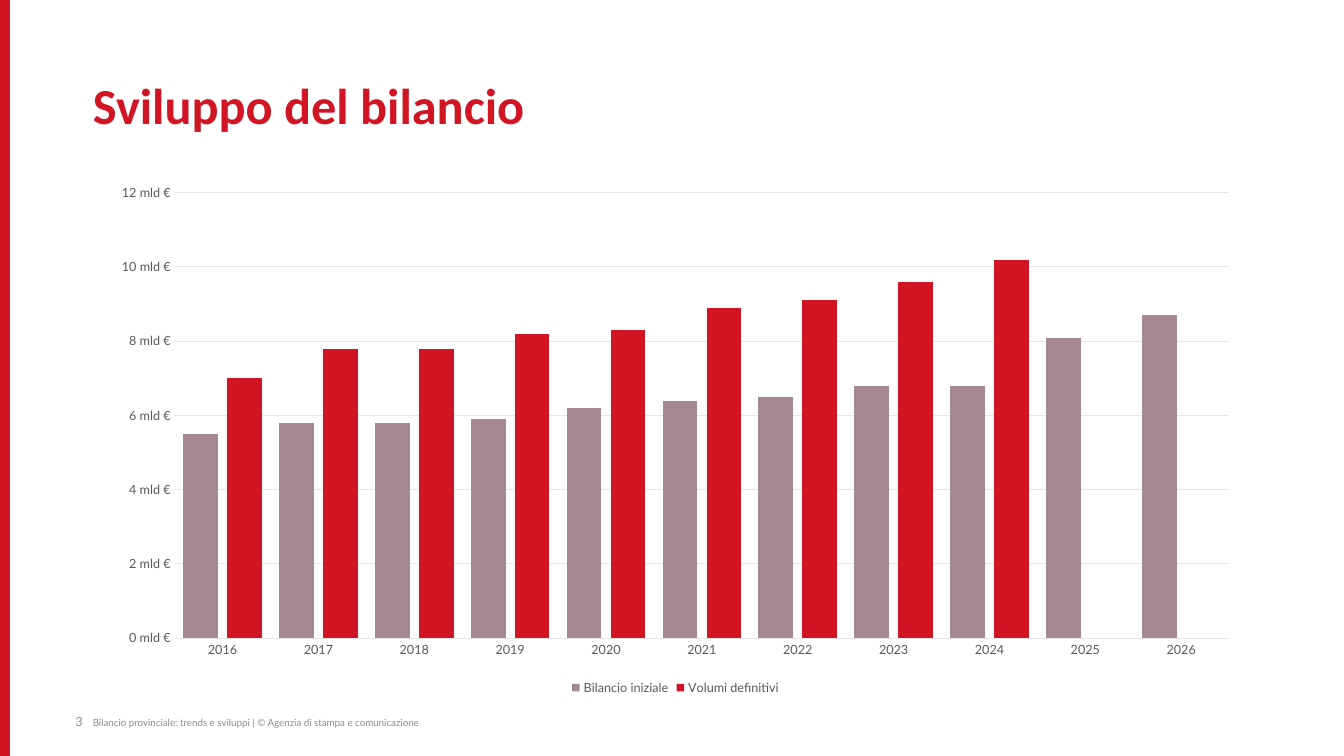
"""Build the budget development slide with its clustered column chart."""
from dataclasses import dataclass

from lxml.etree import SubElement
from pptx import Presentation
from pptx.chart.data import CategoryChartData
from pptx.dml.color import RGBColor
from pptx.enum.chart import XL_CHART_TYPE, XL_LEGEND_POSITION, XL_TICK_MARK
from pptx.enum.shapes import MSO_CONNECTOR
from pptx.enum.text import MSO_ANCHOR, MSO_AUTO_SIZE, PP_ALIGN
from pptx.oxml.ns import qn
from pptx.util import Inches, Pt

RED = RGBColor(0xD1, 0x15, 0x24)
MAUVE = RGBColor(0xA5, 0x89, 0x92)
FOOTER_GREY = RGBColor(0x8C, 0x8C, 0x8C)
LABEL_GREY = RGBColor(0x59, 0x59, 0x59)
GRID_GREY = RGBColor(0xE6, 0xE6, 0xE6)
BILLION = 1_000_000_000
YEARS = [str(year) for year in range(2016, 2027)]


@dataclass
class Label:
    text: str
    left: float
    top: float
    width: float
    height: float
    size: float
    align: PP_ALIGN


@dataclass
class BudgetSeries:
    name: str
    billions: list[float | None]
    color: RGBColor


FOOTERS = [
    Label("Bilancio provinciale: trends e sviluppi | © Agenzia di stampa e comunicazione",
          0.92, 7.11, 5.39, 0.1, 7, PP_ALIGN.LEFT),
    Label("3", 0.24, 7.08, 0.58, 0.15, 9, PP_ALIGN.RIGHT),
]
BUDGETS = [
    BudgetSeries("Bilancio iniziale",
                 [5.5, 5.8, 5.8, 5.9, 6.2, 6.4, 6.5, 6.8, 6.8, 8.1, 8.7], MAUVE),
    BudgetSeries("Volumi definitivi",
                 [7.0, 7.8, 7.8, 8.2, 8.3, 8.9, 9.1, 9.6, 10.2, None, None], RED),
]


def style_font(font, name: str, size: float, color: RGBColor, bold: bool = False) -> None:
    font.name = name
    font.size = Pt(size)
    font.bold = bold
    font.color.rgb = color


def style_line(line, color: RGBColor, width: float) -> None:
    line.color.rgb = color
    line.width = Pt(width)


def prepare_frame(frame) -> None:
    frame.margin_left = frame.margin_right = frame.margin_top = frame.margin_bottom = 0
    frame.word_wrap = True
    frame.auto_size = MSO_AUTO_SIZE.NONE
    frame.vertical_anchor = MSO_ANCHOR.TOP


def add_side_bar(page) -> None:
    bar = page.shapes.add_connector(
        MSO_CONNECTOR.STRAIGHT, Inches(0.05), 0, Inches(0.05), Inches(7.5))
    style_line(bar.line, RED, 7.5)
    SubElement(bar._element.spPr, qn("a:effectLst"))


def add_title(page) -> None:
    title = page.shapes.title
    title.left, title.top = Inches(0.92), Inches(0.8)
    title.width, title.height = Inches(11.5), Inches(1.05)
    prepare_frame(title.text_frame)
    title.text_frame.text = "Sviluppo del bilancio"
    para = title.text_frame.paragraphs[0]
    para.alignment = PP_ALIGN.LEFT
    para.line_spacing = 0.9
    style_font(para.runs[0].font, "Calibri", 36, RED, bold=True)


def add_label(page, label: Label) -> None:
    box = page.shapes.add_textbox(
        Inches(label.left), Inches(label.top), Inches(label.width), Inches(label.height))
    prepare_frame(box.text_frame)
    box.text_frame.text = label.text
    para = box.text_frame.paragraphs[0]
    para.alignment = label.align
    style_font(para.runs[0].font, "Lato", label.size, FOOTER_GREY)


def add_budget_chart(page) -> None:
    data = CategoryChartData()
    data.categories = YEARS
    for budget in BUDGETS:
        data.add_series(budget.name, [
            None if value is None else round(value * BILLION) for value in budget.billions])
    chart = page.shapes.add_chart(
        XL_CHART_TYPE.COLUMN_CLUSTERED, Inches(0.98), Inches(1.73),
        Inches(11.44), Inches(5.21), data).chart
    chart.has_title = False
    style_font(chart.font, "Lato", 10, LABEL_GREY)

    chart.has_legend = True
    chart.legend.position = XL_LEGEND_POSITION.BOTTOM
    chart.legend.include_in_layout = False
    style_font(chart.legend.font, "Lato", 9, LABEL_GREY)

    plot = chart.plots[0]
    plot.gap_width, plot.overlap = 50, -27
    plot.vary_by_categories = False
    for series, budget in zip(plot.series, BUDGETS):
        series.format.fill.solid()
        series.format.fill.fore_color.rgb = budget.color
        series.invert_if_negative = False

    years, amounts = chart.category_axis, chart.value_axis
    for axis in (years, amounts):
        axis.major_tick_mark = axis.minor_tick_mark = XL_TICK_MARK.NONE
        style_font(axis.tick_labels.font, "Lato", 9, LABEL_GREY)
    style_line(years.format.line, GRID_GREY, 0.75)
    amounts.format.line.fill.background()
    amounts.has_major_gridlines = True
    style_line(amounts.major_gridlines.format.line, GRID_GREY, 0.75)
    amounts.minimum_scale, amounts.maximum_scale = 0, 12 * BILLION
    amounts.major_unit = 2 * BILLION
    amounts.tick_labels.number_format = '#,##0,,,\\ "mld €"'
    amounts.tick_labels.number_format_is_linked = False


def main() -> None:
    deck = Presentation()
    deck.slide_width, deck.slide_height = Inches(13.33), Inches(7.5)
    page = deck.slides.add_slide(deck.slide_layouts[5])
    add_side_bar(page)
    add_title(page)
    for label in FOOTERS:
        add_label(page, label)
    add_budget_chart(page)
    deck.save("out.pptx")


if __name__ == "__main__":
    main()
